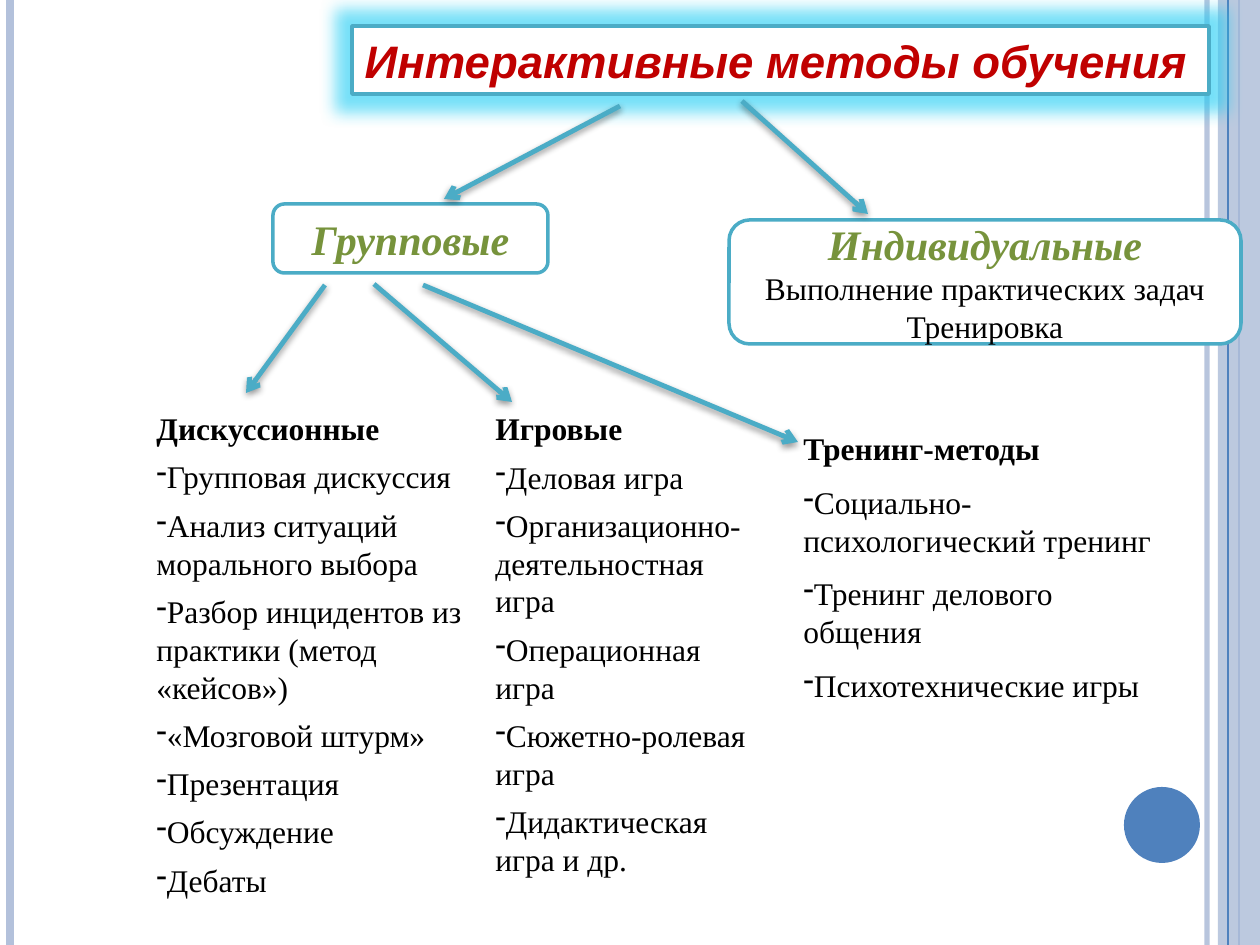
from lxml import etree
from pptx import Presentation
from pptx.dml.color import RGBColor
from pptx.enum.shapes import MSO_CONNECTOR, MSO_SHAPE
from pptx.enum.text import MSO_ANCHOR, MSO_AUTO_SIZE, PP_ALIGN
from pptx.oxml import parse_xml
from pptx.oxml.ns import nsdecls, qn
from pptx.util import Emu, Pt

STRAIGHT = MSO_CONNECTOR.STRAIGHT
RECTANGLE, ROUNDED, OVAL = MSO_SHAPE.RECTANGLE, MSO_SHAPE.ROUNDED_RECTANGLE, MSO_SHAPE.OVAL
TOP, MIDDLE = MSO_ANCHOR.TOP, MSO_ANCHOR.MIDDLE
LEFT, CENTER = PP_ALIGN.LEFT, PP_ALIGN.CENTER
NO_FIT = MSO_AUTO_SIZE.NONE

PX_PER_INCH = 126
WIDTH, HEIGHT = 1260, 945
COLORS = {"white": "FFFFFF", "black": "000000", "pale": "B3C1DB", "blue": "4F81BD",
          "teal": "4BACC6", "red": "C00000", "green": "77933C", "glow": "1CCCF4"}
FORMATS = {
    "title": {"name": "Arial", "size": Pt(26), "bold": True, "italic": True, "color": "red"},
    "group": {"name": "Times New Roman", "size": Pt(24), "bold": True, "italic": True,
              "color": "green"},
    "heading": {"name": "Times New Roman", "size": Pt(18), "bold": True, "color": "black"},
    "body": {"name": "Times New Roman", "size": Pt(18), "bold": False, "color": "black"},
}
SHADOW = ('<a:outerShdw blurRad="50800" dist="20320" dir="5400000" rotWithShape="0">'
          f'<a:srgbClr val="{COLORS["black"]}"><a:alpha val="42000"/></a:srgbClr></a:outerShdw>')
GLOW = (f'<a:glow rad="228600"><a:srgbClr val="{COLORS["glow"]}">'
        '<a:alpha val="60000"/></a:srgbClr></a:glow>')

RULES = [(1207, "pale", 3, 93), (10, "pale", 4.5, 100), (1239, "blue", 1.5, 100)]
ARROWS = [((742, 101), (868, 214)), ((620, 106), (444, 199)), ((325, 285), (246, 393)),
          ((374, 284), (512, 402)), ((423, 285), (798, 442))]
COLUMNS = [
    ((144, 403, 374, 507), 6, "Дискуссионные",
     ["Групповая дискуссия", "Анализ ситуаций морального выбора",
      "Разбор инцидентов из практики (метод «кейсов»)", "«Мозговой штурм»",
      "Презентация", "Обсуждение", "Дебаты"]),
    ((483, 403, 286, 485), 6, "Игровые",
     ["Деловая игра", "Организационно-деятельностная игра", "Операционная игра",
      "Сюжетно-ролевая игра", "Дидактическая игра и др."]),
    ((791, 423, 384, 299), 9, "Тренинг-методы",
     ["Социально-психологический тренинг", "Тренинг делового общения",
      "Психотехнические игры"]),
]


def px(*lengths):
    return [Emu(round(length * 914400 / PX_PER_INCH)) for length in lengths]


def rgb(color):
    return RGBColor.from_string(COLORS[color])


class SlideBuilder:
    """Draws styled elements on the current slide."""

    def __init__(self, presentation):
        self.slide = presentation.slides.add_slide(presentation.slide_layouts[5])
        self.shapes = self.slide.shapes

    def effects(self, shape, content=""):
        properties = shape.element.find(qn("p:spPr"))
        properties.append(parse_xml(f'<a:effectLst {nsdecls("a")}>{content}</a:effectLst>'))

    def opacity(self, shape, percent):
        for color in shape.element.iter(qn("a:srgbClr")):
            etree.SubElement(color, qn("a:alpha"), val=str(percent * 1000))

    def paint(self, shape, fill, line=None):
        shape.fill.solid()
        shape.fill.fore_color.rgb = rgb(fill)
        if line:
            shape.line.color.rgb = rgb(line)
            shape.line.width = Pt(2)
        else:
            shape.line.fill.background()

    def set_text(self, shape, rows, align=LEFT, anchor=TOP, wrap=True, gap=0):
        frame = shape.text_frame
        frame.auto_size = NO_FIT
        frame.word_wrap = wrap
        frame.vertical_anchor = anchor
        for index, (text, style, bullet) in enumerate(rows):
            paragraph = frame.add_paragraph() if index else frame.paragraphs[0]
            paragraph.alignment = align
            paragraph.space_before = Pt(gap if index else 0)
            if bullet:
                properties = paragraph._p.get_or_add_pPr()
                etree.SubElement(properties, qn("a:buFontTx"))
                etree.SubElement(properties, qn("a:buChar"), char="-")
            run = paragraph.add_run()
            run.text = text
            for name, value in FORMATS[style].items():
                if name == "color":
                    run.font.color.rgb = rgb(value)
                else:
                    setattr(run.font, name, value)

    def title(self, box, text):
        shape = self.shapes.title
        shape.left, shape.top, shape.width, shape.height = px(*box)
        self.paint(shape, "white", "teal")
        self.effects(shape, GLOW)
        self.set_text(shape, [(text, "title", False)], anchor=MIDDLE, wrap=False)
        shape.element.getparent().append(shape.element)

    def shape(self, kind, box, fill, line=None):
        shape = self.shapes.add_shape(kind, *px(*box))
        shape.shadow.inherit = False
        self.paint(shape, fill, line)
        return shape

    def line(self, start, end, color, width):
        line = self.shapes.add_connector(STRAIGHT, *px(*start, *end))
        line.line.color.rgb = rgb(color)
        line.line.width = Pt(width)
        return line

    def rule(self, left, color, width, percent=100):
        rule = self.line((left, 0), (left, HEIGHT), color, width)
        self.effects(rule)
        if percent < 100:
            self.opacity(rule, percent)

    def arrow(self, start, end):
        arrow = self.line(start, end, "teal", 2.75)
        etree.SubElement(arrow.element.find(".//" + qn("a:ln")), qn("a:tailEnd"), type="arrow")
        self.effects(arrow, SHADOW)

    def group(self, box, name, details=()):
        rows = [(name, "group", False)] + [(text, "body", False) for text in details]
        self.set_text(self.shape(ROUNDED, box, "white", "teal"), rows, CENTER, MIDDLE)

    def column(self, box, gap, heading, items):
        rows = [(heading, "heading", False)] + [(text, "body", True) for text in items]
        self.set_text(self.shapes.add_textbox(*px(*box)), rows, gap=gap)


def main():
    presentation = Presentation()
    presentation.slide_width, presentation.slide_height = px(WIDTH, HEIGHT)
    builder = SlideBuilder(presentation)
    for rule in RULES:
        builder.rule(*rule)
    builder.opacity(builder.shape(RECTANGLE, (1218, 0, 42, HEIGHT), "pale"), 87)
    builder.rule(1228, "blue", 0.75)
    builder.shape(OVAL, (1124, 787, 76, 76), "blue")
    builder.title((352, 26, 857, 68), "Интерактивные методы обучения")
    builder.group((273, 204, 275, 69), "Групповые")
    builder.group((729, 220, 512, 124), "Индивидуальные",
                  ["Выполнение практических задач", "Тренировка"])
    for column in COLUMNS:
        builder.column(*column)
    for arrow in ARROWS:
        builder.arrow(*arrow)
    presentation.save("out.pptx")


if __name__ == "__main__":
    main()
